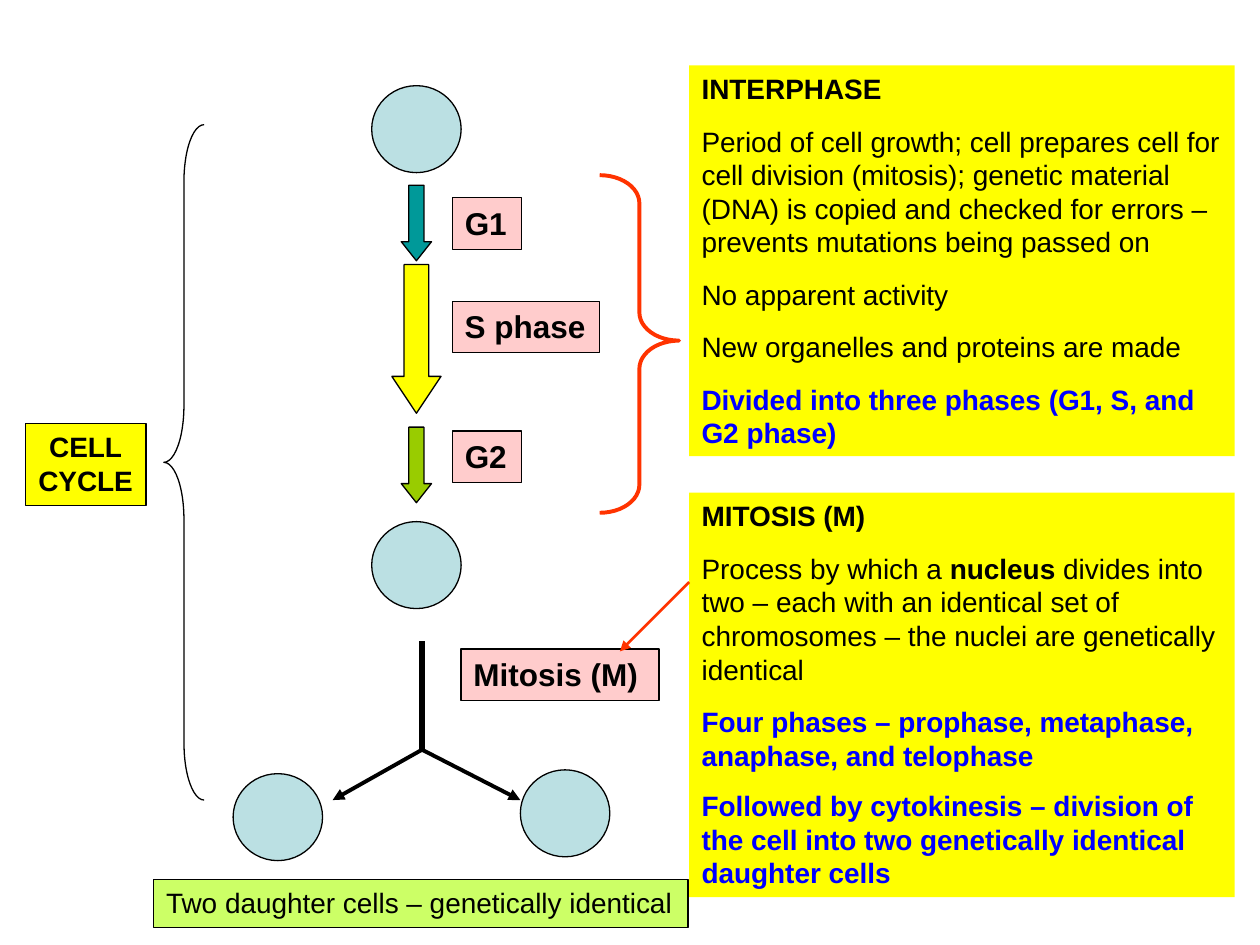
import pptx
import pptx.util
from pptx.dml.color import RGBColor
from pptx.enum.shapes import MSO_CONNECTOR, MSO_SHAPE
from pptx.enum.text import MSO_ANCHOR, MSO_AUTO_SIZE, PP_ALIGN
from pptx.oxml.ns import qn
from lxml import etree

Inches, Pt = pptx.util.Inches, pptx.util.Pt

COLORS = {
    "ink": "000000", "blue": "0000FF", "red": "FF3300", "cell": "BBE0E3",
    "yellow": "FFFF00", "pink": "FFCCCC", "lime": "CCFF66",
    "teal": "009999", "green": "99CC00",
}
CELL_SIZE = (0.71, 0.69)


def rgb(name):
    return RGBColor.from_string(COLORS[name])


def add_figure(page, kind, box, fill=None, line="ink", width=0.75, adjust=()):
    """Preset shape with a plain fill and outline; box is left, top, width, height."""
    shape = page.shapes.add_shape(kind, *map(Inches, box))
    shape.shadow.inherit = False
    if fill:
        shape.fill.solid()
        shape.fill.fore_color.rgb = rgb(fill)
    else:
        shape.fill.background()
    shape.line.color.rgb = rgb(line)
    shape.line.width = Pt(width)
    for index, value in enumerate(adjust):
        shape.adjustments[index] = value
    return shape


def add_line(page, start, end, color, width, arrow=True):
    line = page.shapes.add_connector(
        MSO_CONNECTOR.STRAIGHT, *map(Inches, start + end))
    line.line.color.rgb = rgb(color)
    line.line.width = Pt(width)
    if arrow:
        etree.SubElement(line.line._get_or_add_ln(), qn("a:tailEnd"), type="triangle")
    etree.SubElement(line._element.spPr, qn("a:effectLst"))


def add_text(page, box, paragraphs, fill, size=16, outlined=True, wrap=False,
             align=PP_ALIGN.LEFT):
    """Filled text box; each paragraph is (spans, color, space before), a span (text, bold)."""
    shape = page.shapes.add_textbox(*map(Inches, box))
    shape.fill.solid()
    shape.fill.fore_color.rgb = rgb(fill)
    if outlined:
        shape.line.color.rgb = rgb("ink")
        shape.line.width = Pt(0.75)
    frame = shape.text_frame
    frame.word_wrap = wrap
    frame.auto_size = MSO_AUTO_SIZE.SHAPE_TO_FIT_TEXT
    frame.vertical_anchor = MSO_ANCHOR.TOP
    for index, (spans, color, gap) in enumerate(paragraphs):
        para = frame.paragraphs[0] if index == 0 else frame.add_paragraph()
        para.alignment = align
        para.space_before = Pt(gap)
        para.font.name = "Arial"
        para.font.size = Pt(size)
        para.font.color.rgb = rgb(color)
        for text, bold in spans:
            span = para.add_run()
            span.text = text
            span.font.name = "Arial"
            span.font.size = Pt(size)
            span.font.color.rgb = rgb(color)
            span.font.bold = bold


def add_label(page, box, text, fill="pink", size=18, bold=True, wrap=False):
    add_text(page, box, [([(text, bold)], "ink", 0)], fill, size, wrap=wrap)


def add_cell(page, left, top):
    add_figure(page, MSO_SHAPE.OVAL, (left, top) + CELL_SIZE, "cell")


def add_cycle_bracket(page, left, top):
    add_figure(page, MSO_SHAPE.LEFT_BRACE, (left + 1.1, top, 0.32, 5.36),
               adjust=(1.413, 0.5))
    words = [([(word, True)], "ink", 0) for word in ("CELL", "CYCLE")]
    add_text(page, (left, top + 2.37, 0.96, 0.65), words, "yellow",
             align=PP_ALIGN.CENTER)


def add_interphase_steps(page, left, top):
    """Parent cell, the three growth phases and the cell ready to divide."""
    center = left + CELL_SIZE[0] / 2
    for offset in (0, 3.46):
        add_cell(page, left, top + offset)
    steps = [
        ("G1", 0.55, "teal", 0.79, 0.24, 0.6, 0.631),
        ("S phase", 1.17, "yellow", 1.42, 0.39, 1.18, 0.75),
        ("G2", 0.55, "green", 2.71, 0.24, 0.6, 0.631),
    ]
    for name, label_width, color, offset, width, height, head in steps:
        arrow_top = top + offset
        add_figure(page, MSO_SHAPE.DOWN_ARROW,
                   (center - width / 2, arrow_top, width, height), color,
                   adjust=(0.5, head))
        label_top = arrow_top + (0.29 if name == "S phase" else 0.1 if name == "G1" else 0.03)
        add_label(page, (left + 0.64, label_top, label_width, 0.41), name)
    add_figure(page, MSO_SHAPE.RIGHT_BRACE, (left + 1.81, top + 0.71, 0.63, 2.68),
               line="red", width=2.25, adjust=(0.354, 0.49))


def add_division(page, left, top):
    """Fork from the dividing cell to its two daughter cells."""
    add_cell(page, left + 0.63, top + 1.05)
    add_cell(page, left + 2.91, top + 1.02)
    fork = (left + 2.13, top + 0.86)
    add_line(page, (fork[0], top), fork, "ink", 3, arrow=False)
    for tip in (1.42, 2.91):
        add_line(page, fork, (left + tip, top + 1.26), "ink", 2.25)
    add_label(page, (left + 2.44, top + 0.06, 1.57, 0.41), "Mitosis (M)", wrap=True)
    add_label(page, (left, top + 1.89, 4.24, 0.38),
              "Two daughter cells – genetically identical", "lime", 16, False)


def add_notes_panel(page, box, heading, paragraphs):
    content = [([(heading, True)], "ink", 0)] + paragraphs
    add_text(page, box, content, "yellow", outlined=False, wrap=True)


def main():
    deck = pptx.Presentation()
    deck.slide_width, deck.slide_height = Inches(10), Inches(7.5)
    page = deck.slides.add_slide(deck.slide_layouts[6])

    add_notes_panel(page, (5.47, 3.91, 4.33, 3.21), "MITOSIS (M)", [
        ([("Process by which a", False), (" nucleus", True),
          (" divides into two – each with an identical set of chromosomes"
           " – the nuclei are genetically identical", False)], "ink", 10.8),
        ([("Four phases – prophase, metaphase, anaphase, and telophase", True)],
         "blue", 10.8),
        ([("Followed by cytokinesis – division of the cell into two"
           " genetically identical daughter cells", True)], "blue", 9.6),
    ])
    add_notes_panel(page, (5.47, 0.52, 4.33, 3.1), "INTERPHASE", [
        ([("Period of cell growth; cell prepares cell for cell division (mitosis);"
           " genetic material (DNA) is copied and checked for errors –"
           " prevents mutations being passed on", False)], "ink", 10.8),
        ([("No apparent activity", False)], "ink", 10.8),
        ([("New organelles and proteins are made", False)], "ink", 10.8),
        ([("Divided into three phases (G1, S, and G2 phase)", True)], "blue", 10.8),
    ])
    add_cycle_bracket(page, 0.2, 0.99)
    add_interphase_steps(page, 2.95, 0.68)
    add_division(page, 1.22, 5.09)
    add_line(page, (5.47, 4.62), (4.92, 5.17), "red", 1.5)

    deck.save("out.pptx")


if __name__ == "__main__":
    main()
